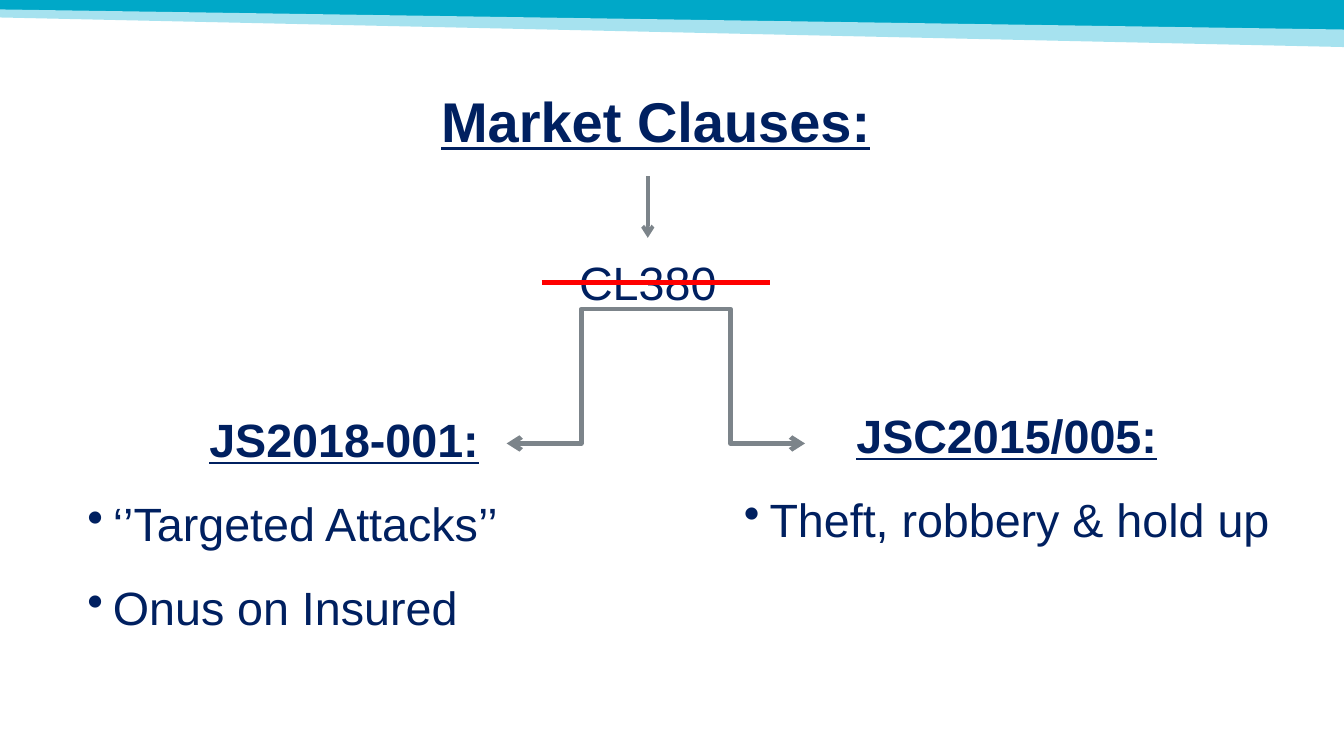
from lxml import etree
from pptx import Presentation
from pptx.dml.color import RGBColor
from pptx.enum.shapes import MSO_CONNECTOR
from pptx.enum.text import PP_ALIGN
from pptx.oxml.ns import qn
from pptx.util import Inches, Pt

STRAIGHT, ELBOW = MSO_CONNECTOR.STRAIGHT, MSO_CONNECTOR.ELBOW
LEFT, CENTER = PP_ALIGN.LEFT, PP_ALIGN.CENTER

FONT = "Arial"
COLORS = {
    "teal": "00A8C8",
    "pale_teal": "A6E2EF",
    "navy": "002060",
    "gray": "7C848A",
    "red": "FF0000",
}


def color(name):
    return RGBColor.from_string(COLORS[name])


def add_band(page, points, fill):
    corners = [(Inches(x), Inches(y)) for x, y in points]
    builder = page.shapes.build_freeform(*corners[0], scale=1.0)
    builder.add_line_segments(corners[1:], close=True)
    band = builder.convert_to_shape()
    band.shadow.inherit = False
    band.fill.solid()
    band.fill.fore_color.rgb = color(fill)
    band.line.fill.background()


def add_header(page, width):
    add_band(page, [(0, 0), (width, 0), (width, 0.24), (0, 0.09)], "teal")
    add_band(page, [(0, 0.07), (width, 0.22), (width, 0.35), (0, 0.13)], "pale_teal")


def add_line(page, start, end, name, width, kind=STRAIGHT, arrow=True):
    line = page.shapes.add_connector(kind, *map(Inches, start + end))
    line.line.color.rgb = color(name)
    line.line.width = Pt(width)
    if arrow:
        etree.SubElement(line.line._get_or_add_ln(), qn("a:tailEnd"), type="arrow")
    etree.SubElement(line._element.spPr, qn("a:effectLst"))


def style_paragraph(para, text, size, heading, align):
    para.text = text
    para.alignment = align
    para.space_before = Pt(0.6 * size)
    para.font.name = FONT
    para.font.size = Pt(size)
    para.font.bold = para.font.underline = heading
    para.font.color.rgb = color("navy")


def add_bullet(para):
    properties = para._p.get_or_add_pPr()
    properties.set("marL", str(Inches(0.19)))
    properties.set("indent", str(-Inches(0.19)))
    mark = etree.Element(qn("a:buChar"), char="•")
    properties.find(qn("a:spcBef")).addnext(mark)


def add_text(page, box, title, size=25, heading=True, bullets=(), bullet_align=LEFT):
    """Place a centred title with optional bullets below it."""
    text_box = page.shapes.add_textbox(*map(Inches, box))
    frame = text_box.text_frame
    frame.word_wrap = True
    frame.margin_left = frame.margin_right = frame.margin_top = frame.margin_bottom = 0
    style_paragraph(frame.paragraphs[0], title, size, heading, CENTER)
    for text in bullets:
        para = frame.add_paragraph()
        style_paragraph(para, text, size, False, bullet_align)
        add_bullet(para)


def add_branches(page, left, top, width, height):
    """Fork from the top centre to both lower corners."""
    middle = left + width / 2
    for corner in (left, left + width):
        add_line(page, (middle, top), (corner, top + height), "gray", 2.5, ELBOW)


def main():
    deck = Presentation()
    deck.slide_width = Inches(10)
    deck.slide_height = deck.slide_width * 9 // 16
    page = deck.slides.add_slide(deck.slide_layouts[6])

    add_header(page, 10)
    add_text(page, (2.97, 0.64, 3.82, 0.78), "Market Clauses:", size=30)
    add_text(page, (2.91, 1.89, 3.82, 0.78), "CL380", heading=False)
    add_text(page, (5.25, 3.03, 4.48, 2.36), "JSC2015/005:",
             bullets=["Theft, robbery & hold up"], bullet_align=CENTER)
    add_text(page, (0.65, 3.06, 3.82, 2.4), "JS2018-001:",
             bullets=["‘’Targeted Attacks’’", "Onus on Insured"])

    add_line(page, (4.82, 1.31), (4.82, 1.77), "gray", 2)
    add_branches(page, 3.77, 2.3, 2.22, 1)
    add_line(page, (4.03, 2.1), (5.73, 2.1), "red", 2.5, arrow=False)
    deck.save("out.pptx")


if __name__ == "__main__":
    main()
